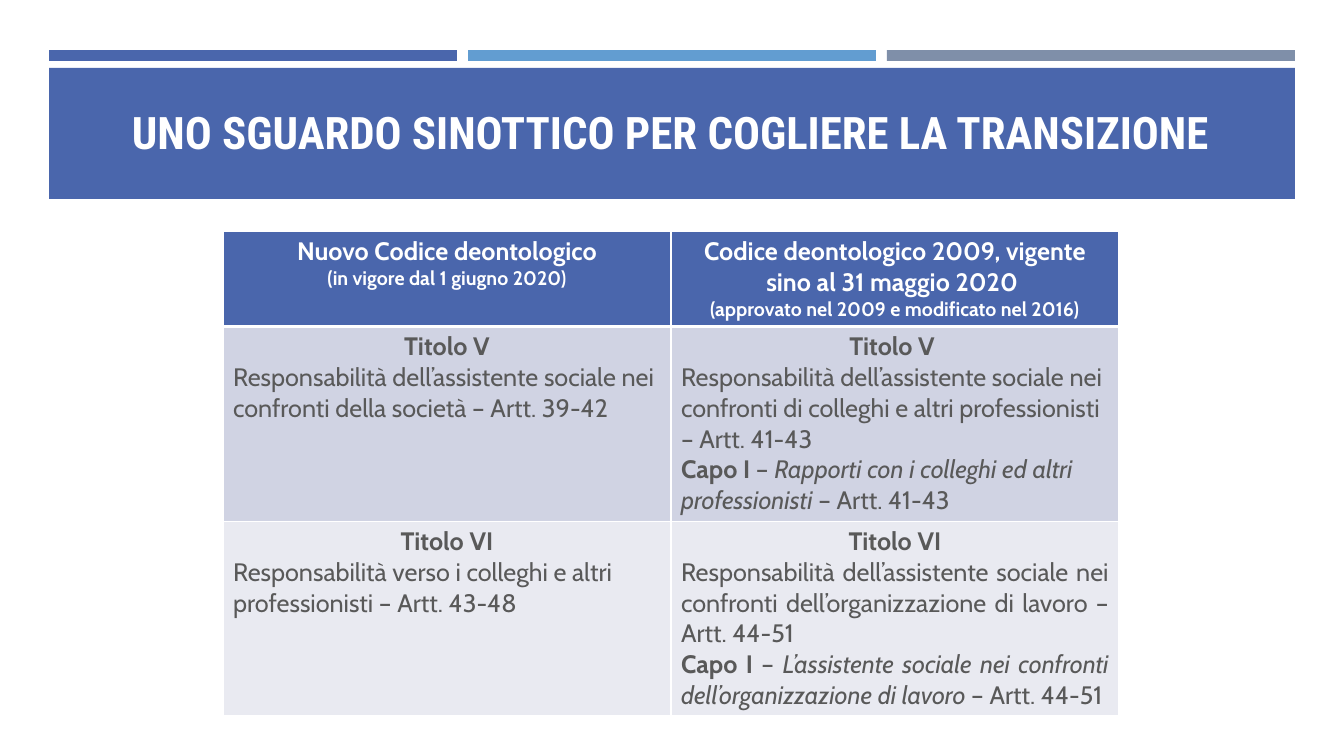
from lxml import etree
from pptx import Presentation
from pptx import util as u
from pptx.dml.color import RGBColor
from pptx.enum import shapes, text
from pptx.oxml.ns import qn

PX = 914400 / 100.8
BLUE = RGBColor(0x4A, 0x66, 0xAC)
SKY = RGBColor(0x62, 0x9D, 0xD1)
SLATE = RGBColor(0x7F, 0x8F, 0xA9)
WHITE = RGBColor(0xFF, 0xFF, 0xFF)
GREY = RGBColor(0x59, 0x59, 0x59)
BAND_DARK = RGBColor(0xD0, 0xD3, 0xE3)
BAND_LIGHT = RGBColor(0xE9, 0xEA, 0xF1)

LEFT, CENTER, JUSTIFY = text.PP_ALIGN.LEFT, text.PP_ALIGN.CENTER, text.PP_ALIGN.JUSTIFY
BOLD, ITALIC, PLAIN = "bold", "italic", "plain"

TITLE = "UNO SGUARDO SINOTTICO PER COGLIERE LA TRANSIZIONE"

# Each cell is a list of paragraphs: (alignment, size, [(words, style), ...])
HEADER = [
    [(CENTER, 18, [("Nuovo Codice deontologico", BOLD)]),
     (CENTER, 14, [("(in vigore dal 1 giugno 2020)", BOLD)])],
    [(CENTER, 18, [("Codice deontologico 2009, vigente sino al 31 maggio 2020 ", BOLD)]),
     (CENTER, 14, [("(approvato nel 2009 e modificato nel 2016)", BOLD)])],
]
TITOLO_V = [
    [(CENTER, 18, [("Titolo V", BOLD)]),
     (LEFT, 18, [("Responsabilità dell’assistente sociale nei confronti della società"
                  " – Artt. 39-42", PLAIN)])],
    [(CENTER, 18, [("Titolo V ", BOLD)]),
     (LEFT, 18, [("Responsabilità dell’assistente sociale nei confronti di colleghi"
                  " e altri professionisti – Artt. 41-43", PLAIN)]),
     (LEFT, 18, [("Capo I ", BOLD), ("– ", PLAIN),
                 ("Rapporti con i colleghi ed altri professionisti", ITALIC),
                 (" – Artt. 41-43", PLAIN)])],
]
TITOLO_VI = [
    [(CENTER, 18, [("Titolo VI", BOLD)]),
     (LEFT, 18, [("Responsabilità verso i colleghi e altri professionisti"
                  " – Artt. 43-48", PLAIN)])],
    [(CENTER, 18, [("Titolo VI", BOLD)]),
     (JUSTIFY, 18, [("Responsabilità dell’assistente sociale nei confronti"
                     " dell’organizzazione di lavoro – Artt. 44-51", PLAIN)]),
     (JUSTIFY, 18, [("Capo I", BOLD), (" – ", PLAIN),
                    ("L’assistente sociale nei confronti dell’organizzazione di lavoro",
                     ITALIC),
                    (" – Artt. 44-51", PLAIN)])],
]
# (cells, height in px, fill, text colour, bottom border in points)
ROWS = [
    (HEADER, 95, BLUE, WHITE, 3),
    (TITOLO_V, 194, BAND_DARK, GREY, 1),
    (TITOLO_VI, 194, BAND_LIGHT, GREY, 1),
]


def px(*lengths):
    return [u.Emu(round(length * PX)) for length in lengths]


def add_bar(page, color, *frame):
    bar = page.shapes.add_shape(shapes.MSO_SHAPE.RECTANGLE, *px(*frame))
    bar.shadow.inherit = False
    bar.fill.solid()
    bar.fill.fore_color.rgb = color
    bar.line.fill.background()


def set_borders(cell, top, bottom):
    """Draw white edges; widths are in points and go before the cell's fill."""
    properties = cell._tc.get_or_add_tcPr()
    edges = [("a:lnL", 1), ("a:lnR", 1), ("a:lnT", top), ("a:lnB", bottom)]
    for index, (tag, width) in enumerate(edges):
        edge = etree.Element(qn(tag), w=str(u.Pt(width)))
        fill = etree.SubElement(edge, qn("a:solidFill"))
        etree.SubElement(fill, qn("a:srgbClr"), val=str(WHITE))
        properties.insert(index, edge)


def write_cell(cell, paragraphs, color):
    frame = cell.text_frame
    for index, (alignment, size, spans) in enumerate(paragraphs):
        para = frame.add_paragraph() if index else frame.paragraphs[0]
        para.alignment = alignment
        for words, style in spans:
            span = para.add_run()
            span.text = words
            span.font.name = "Cabin"
            span.font.size = u.Pt(size)
            span.font.color.rgb = color
            span.font.bold = style == BOLD
            span.font.italic = style == ITALIC


def add_comparison(page):
    height = sum(row[1] for row in ROWS)
    table = page.shapes.add_table(len(ROWS), 2, *px(223, 231, 896, height)).table
    top = 1
    for r, (cells, row_height, fill, color, bottom) in enumerate(ROWS):
        table.rows[r].height = px(row_height)[0]
        for c, paragraphs in enumerate(cells):
            cell = table.cell(r, c)
            cell.fill.solid()
            cell.fill.fore_color.rgb = fill
            set_borders(cell, top, bottom)
            write_cell(cell, paragraphs, color)
        top = bottom


def add_title(page):
    title = page.shapes.title
    title.left, title.top, title.width, title.height = px(63, 87, 1216, 77)
    frame = title.text_frame
    frame.text = TITLE
    frame.auto_size = text.MSO_AUTO_SIZE.NONE
    frame.vertical_anchor = text.MSO_ANCHOR.BOTTOM
    para = frame.paragraphs[0]
    para.alignment = CENTER
    para.font.name = "Roboto Condensed"
    para.font.size = u.Pt(32)
    para.font.bold = True
    para.font.color.rgb = WHITE
    # The title is first in the page; move it in front of the banner
    page.shapes._spTree.append(title._element)


def main():
    deck = Presentation()
    deck.slide_width, deck.slide_height = px(1344, 756)
    page = deck.slides.add_slide(deck.slide_layouts[5])
    for index, color in enumerate([BLUE, SKY, SLATE]):
        add_bar(page, color, 49 + 419 * index, 50, 408, 11)
    add_bar(page, BLUE, 49, 68, 1246, 131)
    add_title(page)
    add_comparison(page)
    deck.save("out.pptx")


if __name__ == "__main__":
    main()
